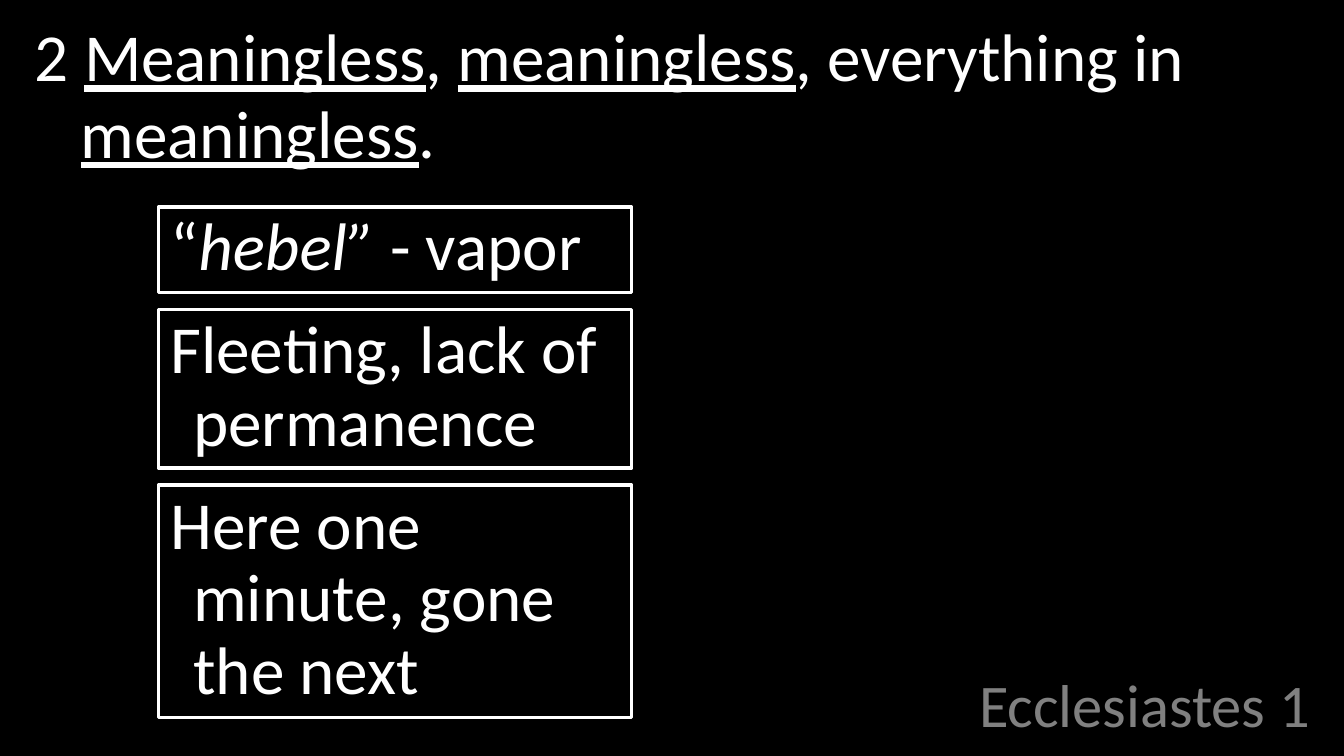
from pptx import Presentation
from pptx.dml.color import RGBColor
from pptx.enum.shapes import MSO_SHAPE
from pptx.enum.text import MSO_ANCHOR, MSO_AUTO_SIZE, PP_ALIGN
from pptx.util import Inches, Pt

ROUND = MSO_SHAPE.ROUNDED_RECTANGLE
TOP, MIDDLE, BOTTOM = MSO_ANCHOR.TOP, MSO_ANCHOR.MIDDLE, MSO_ANCHOR.BOTTOM
LEFT, RIGHT = PP_ALIGN.LEFT, PP_ALIGN.RIGHT
FIT, FIXED = MSO_AUTO_SIZE.SHAPE_TO_FIT_TEXT, MSO_AUTO_SIZE.NONE
COLORS = {"back": "000000", "text": "FFFFFF", "title": "808080"}

VERSE = [("2 ", ""), ("Meaningless", "u"), (", ", ""), ("meaningless", "u"),
         (", everything in ", ""), ("meaningless", "u"), (".", "")]
NOTES = [
    (0.71, [("“", ""), ("hebel”", "i"), (" - vapor", "")]),
    (1.31, [("Fleeting, lack of permanence", "")]),
    (1.92, [("Here one minute, gone the next", "")]),
]
GAP = 0.14


def color(name):
    """Return the named colour."""
    return RGBColor.from_string(COLORS[name])


def write(shape, runs, size, tone, space, hang=0, align=LEFT, anchor=TOP, fit=FIXED):
    """Fill a shape with one paragraph of marked runs."""
    frame = shape.text_frame
    frame.word_wrap = True
    frame.auto_size = fit
    frame.vertical_anchor = anchor
    para = frame.paragraphs[0]
    para.alignment = align
    para.line_spacing = space
    para.font.name = "Calibri"
    para.font.size = Pt(size)
    para.font.color.rgb = color(tone)
    if hang:
        props = para._p.get_or_add_pPr()
        props.set("marL", str(Inches(hang)))
        props.set("indent", str(-Inches(hang)))
    for text, mark in runs:
        run = para.add_run()
        run.text = text
        if mark == "u":
            run.font.underline = True
        elif mark == "i":
            run.font.italic = True
    return para


def add_title(slide, x, y, w, h):
    """Place the chapter name in the title placeholder."""
    title = slide.shapes.title
    title.left, title.top, title.width, title.height = map(Inches, (x, y, w, h))
    write(title, [("Ecclesiastes 1", "")], 36, "title", 0.8, align=RIGHT, anchor=BOTTOM)


def add_verse(slide, x, y, w, h):
    """Place the verse with a hanging indent."""
    box = slide.shapes.add_textbox(*map(Inches, (x, y, w, h)))
    para = write(box, VERSE, 40, "text", 0.95, hang=0.38)
    para.space_before = Pt(8)


def add_notes(slide, x, y, w):
    """Stack the outlined notes downward with equal gaps."""
    for h, runs in NOTES:
        note = slide.shapes.add_shape(ROUND, *map(Inches, (x, y, w, h)))
        note.adjustments[0] = 0
        note.shadow.inherit = False
        note.fill.solid()
        note.fill.fore_color.rgb = color("back")
        note.line.color.rgb = color("text")
        note.line.width = Pt(2)
        write(note, runs, 40, "text", 0.9, hang=0.19, anchor=TOP, fit=FIT)
        y += h + GAP


def main():
    """Build and save the slide."""
    deck = Presentation()
    deck.slide_width, deck.slide_height = Inches(11.11), Inches(6.25)
    slide = deck.slides.add_slide(deck.slide_layouts[5])
    slide.background.fill.solid()
    slide.background.fill.fore_color.rgb = color("back")
    add_title(slide, 7.06, 5.56, 3.87, 0.6)
    add_verse(slide, 0.19, 0.12, 10.74, 5.29)
    add_notes(slide, 1.31, 1.71, 3.91)
    deck.save("out.pptx")


if __name__ == "__main__":
    main()
